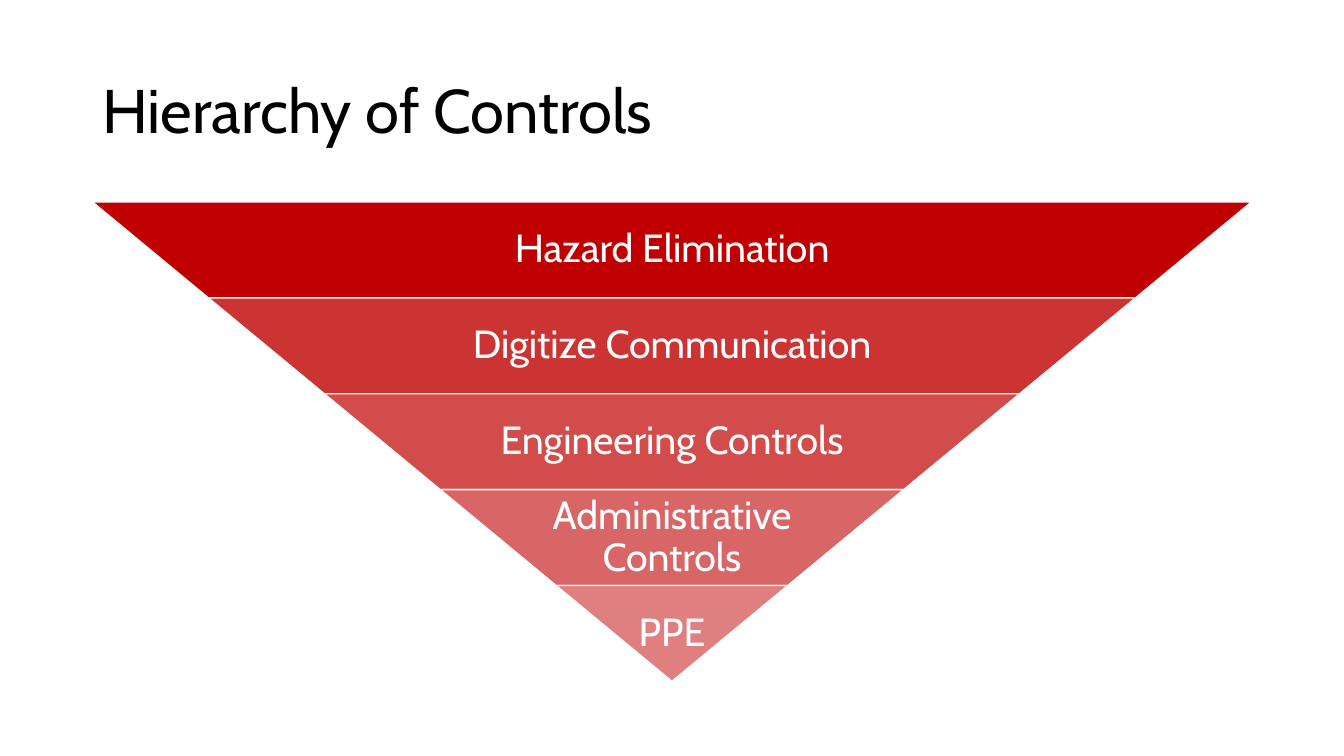
from lxml import etree
from pptx import Presentation
from pptx import util as u
from pptx.dml.color import RGBColor
from pptx.enum import text
from pptx.oxml.ns import qn

TITLE = "Hierarchy of Controls"
# Label and fill opacity in percent, from the most to the least effective
CONTROLS = [
    ("Hazard Elimination", 100),
    ("Digitize Communication", 80),
    ("Engineering Controls", 70),
    ("Administrative Controls", 60),
    ("PPE", 50),
]
COLORS = {"title": "000000", "tier": "C00000", "light": "FFFFFF"}
FONT = "Cabin"

LEFT, WIDTH = 2.33, 29.21
TITLE_TOP, TITLE_HEIGHT = 1.01, 3.68
PYRAMID_TOP, TIER_HEIGHT = 5.09, 2.416
TIER_STEP = WIDTH / 2 / len(CONTROLS)
MARGIN, MARGIN_SHARE = 0.1, 0.175


def write(frame, wording, size, color):
    frame.word_wrap = True
    frame.vertical_anchor = text.MSO_ANCHOR.MIDDLE
    frame.text = wording
    paragraph = frame.paragraphs[0]
    paragraph.line_spacing = 0.9
    font = paragraph.runs[0].font
    font.name, font.size = FONT, u.Pt(size)
    font.color.rgb = RGBColor.from_string(COLORS[color])
    return paragraph


def add_tier(slide, index, label, opacity):
    """Draw one slice of the inverted pyramid; each is narrower by a step per side."""
    top = PYRAMID_TOP + index * TIER_HEIGHT
    bottom = top + TIER_HEIGHT
    left = LEFT + index * TIER_STEP
    width = WIDTH - 2 * index * TIER_STEP
    right = left + width
    corners = [(right, top), (right - TIER_STEP, bottom),
               (left + TIER_STEP, bottom), (left, top)]
    points = [(u.Cm(x), u.Cm(y)) for x, y in corners]
    builder = slide.shapes.build_freeform(*points[0])
    builder.add_line_segments(points[1:], close=True)
    tier = builder.convert_to_shape()
    tier.shadow.inherit = False

    tier.fill.solid()
    tier.fill.fore_color.rgb = RGBColor.from_string(COLORS["tier"])
    if opacity < 100:
        fill_color = tier._element.spPr.find(qn("a:solidFill"))[0]
        etree.SubElement(fill_color, qn("a:alpha"), val=str(opacity * 1000))
    tier.line.color.rgb = RGBColor.from_string(COLORS["light"])
    tier.line.width = u.Pt(1)

    frame = tier.text_frame
    is_tip = index == len(CONTROLS) - 1
    side_margin = MARGIN if is_tip else MARGIN + MARGIN_SHARE * width
    frame.margin_left = frame.margin_right = u.Cm(side_margin)
    frame.margin_top = frame.margin_bottom = u.Cm(MARGIN)
    write(frame, label, 28, "light").alignment = text.PP_ALIGN.CENTER


def main():
    deck = Presentation()
    deck.slide_width, deck.slide_height = u.Cm(33.87), u.Cm(19.05)
    slide = deck.slides.add_slide(deck.slide_layouts[6])

    heading = slide.shapes.add_textbox(
        u.Cm(LEFT), u.Cm(TITLE_TOP), u.Cm(WIDTH), u.Cm(TITLE_HEIGHT))
    write(heading.text_frame, TITLE, 44, "title")

    for index, (label, opacity) in enumerate(CONTROLS):
        add_tier(slide, index, label, opacity)

    deck.save("out.pptx")


if __name__ == "__main__":
    main()
